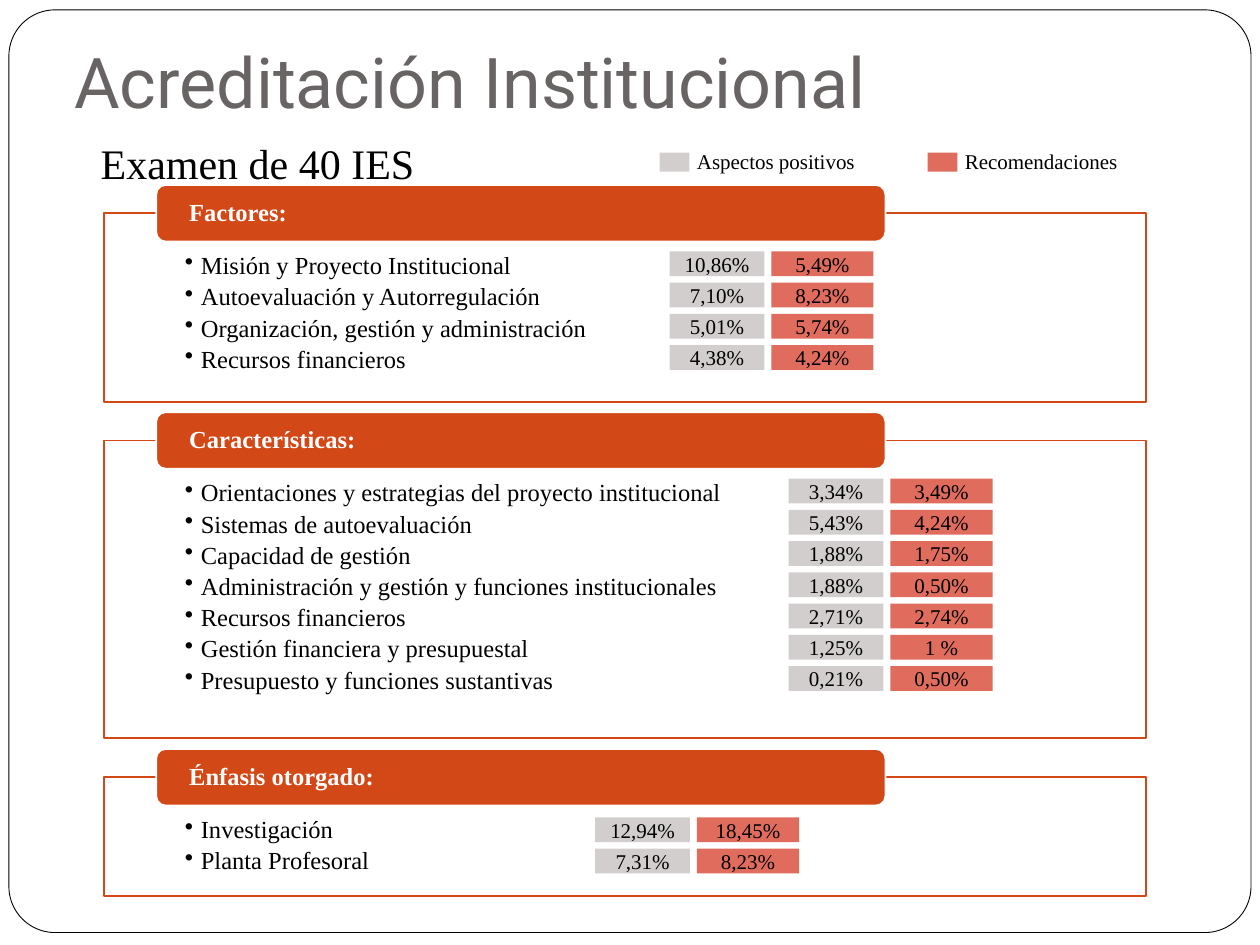
from dataclasses import dataclass
from typing import NamedTuple, Optional

import pptx
import pptx.dml.color
import pptx.enum.shapes
import pptx.enum.text
import pptx.oxml.ns
import pptx.util
from lxml import etree

Cm, Pt = pptx.util.Cm, pptx.util.Pt
SHAPE = pptx.enum.shapes.MSO_SHAPE
ANCHOR = pptx.enum.text.MSO_ANCHOR
ALIGN = pptx.enum.text.PP_ALIGN

SERIF = "Times New Roman"
BLACK, WHITE, ORANGE = "000000", "FFFFFF", "D34817"
GRAY, RED, TITLE_GRAY = "D3CECE", "DF6C5D", "696464"

PANEL_LEFT, PANEL_WIDTH = 2.1, 21
HEADER_LEFT, HEADER_WIDTH, HEADER_HEIGHT, HEADER_RISE = 3.15, 14.7, 1.14, 0.57
ROW_PITCH, CELL_HEIGHT = 0.63, 0.5
POSITIVE_WIDTH, ADVICE_WIDTH, ADVICE_OFFSET = 1.91, 2.06, 2.05


class Area(NamedTuple):
    """Left, top, width and height in centimetres."""
    left: float
    top: float
    width: float
    height: float

    def lengths(self):
        return [Cm(value) for value in self]


class Row(NamedTuple):
    label: str
    positive: str
    advice: str


@dataclass
class Section:
    heading: str
    top: float
    height: float
    cells_left: float
    cells_top: float
    rows: list[Row]


@dataclass
class Legend:
    label: str
    color: str
    swatch_left: float
    text_left: float


SECTIONS = [
    Section("Factores:", 4.3, 3.8, 13.5, 5.07, [
        Row("Misión y Proyecto Institucional", "10,86%", "5,49%"),
        Row("Autoevaluación y Autorregulación", "7,10%", "8,23%"),
        Row("Organización, gestión y administración", "5,01%", "5,74%"),
        Row("Recursos financieros", "4,38%", "4,24%"),
    ]),
    Section("Características:", 8.88, 6, 15.9, 9.65, [
        Row("Orientaciones y estrategias del proyecto institucional", "3,34%", "3,49%"),
        Row("Sistemas de autoevaluación", "5,43%", "4,24%"),
        Row("Capacidad de gestión", "1,88%", "1,75%"),
        Row("Administración y gestión y funciones institucionales", "1,88%", "0,50%"),
        Row("Recursos financieros", "2,71%", "2,74%"),
        Row("Gestión financiera y presupuestal", "1,25%", "1 %"),
        Row("Presupuesto y funciones sustantivas", "0,21%", "0,50%"),
    ]),
    Section("Énfasis otorgado:", 15.67, 2.4, 12, 16.48, [
        Row("Investigación", "12,94%", "18,45%"),
        Row("Planta Profesoral", "7,31%", "8,23%"),
    ]),
]
LEGENDS = [
    Legend("Aspectos positivos", GRAY, 13.3, 13.8),
    Legend("Recomendaciones", RED, 18.7, 19.2),
]


def rgb(color: str):
    return pptx.dml.color.RGBColor.from_string(color)


def add_block(page, kind, area: Area, fill: str,
              line: Optional[str] = None, line_width: float = 1):
    block = page.shapes.add_shape(kind, *area.lengths())
    block.shadow.inherit = False
    block.fill.solid()
    block.fill.fore_color.rgb = rgb(fill)
    if line:
        block.line.color.rgb = rgb(line)
        block.line.width = Pt(line_width)
    else:
        block.line.fill.background()
    return block


def write(shape, text: str, size: float, color: str = BLACK, font: str = SERIF,
          bold: bool = False, align=ALIGN.LEFT, anchor=ANCHOR.TOP):
    frame = shape.text_frame
    frame.text = text
    frame.word_wrap = True
    frame.vertical_anchor = anchor
    for para in frame.paragraphs:
        para.alignment = align
        for span in para.runs:
            span.font.size = Pt(size)
            span.font.name = font
            span.font.bold = bold
            span.font.color.rgb = rgb(color)
    return frame


def set_insets(frame, side: float, top: float, bottom: float):
    frame.margin_left = frame.margin_right = Cm(side)
    frame.margin_top, frame.margin_bottom = Cm(top), Cm(bottom)


def add_label(page, area: Area, text: str, size: float):
    frame = write(page.shapes.add_textbox(*area.lengths()), text, size)
    frame.auto_size = pptx.enum.text.MSO_AUTO_SIZE.SHAPE_TO_FIT_TEXT


def add_bullet(para):
    properties = para._p.get_or_add_pPr()
    properties.set("marL", str(Cm(0.32)))
    properties.set("indent", str(-Cm(0.32)))
    bullet = etree.SubElement(properties, pptx.oxml.ns.qn("a:buChar"))
    bullet.set("char", "•")


def add_panel(page, section: Section):
    area = Area(PANEL_LEFT, section.top, PANEL_WIDTH, section.height)
    panel = add_block(page, SHAPE.RECTANGLE, area, WHITE, ORANGE)
    fill_color = panel._element.spPr.find(".//" + pptx.oxml.ns.qn("a:srgbClr"))
    etree.SubElement(fill_color, pptx.oxml.ns.qn("a:alpha")).set("val", "90000")

    frame = write(panel, "\n".join(row.label for row in section.rows), 14)
    set_insets(frame, 1.63, 0.81, 0.28)
    for para in frame.paragraphs:
        para.line_spacing = 0.9
        para.space_after = Pt(2.7)
        add_bullet(para)

    area = Area(HEADER_LEFT, section.top - HEADER_RISE, HEADER_WIDTH, HEADER_HEIGHT)
    header = add_block(page, SHAPE.ROUNDED_RECTANGLE, area, ORANGE, WHITE)
    frame = write(header, section.heading, 14, WHITE, bold=True, anchor=ANCHOR.MIDDLE)
    frame.paragraphs[0].line_spacing = 0.9
    set_insets(frame, 0.61, 0.05, 0.05)


def add_cells(page, section: Section):
    for index, row in enumerate(section.rows):
        top = section.cells_top + index * ROW_PITCH
        for text, offset, width, color in (
            (row.positive, 0, POSITIVE_WIDTH, GRAY),
            (row.advice, ADVICE_OFFSET, ADVICE_WIDTH, RED),
        ):
            area = Area(section.cells_left + offset, top, width, CELL_HEIGHT)
            cell = add_block(page, SHAPE.RECTANGLE, area, color)
            write(cell, text, 12, align=ALIGN.CENTER, anchor=ANCHOR.MIDDLE)


def main():
    deck = pptx.Presentation()
    deck.slide_width, deck.slide_height = Cm(25.4), Cm(19.05)
    page = deck.slides.add_slide(deck.slide_layouts[6])

    border = add_block(page, SHAPE.ROUNDED_RECTANGLE, Area(0.18, 0.2, 25.04, 18.6),
                       WHITE, BLACK, 0.5)
    border.adjustments[0] = 0.05

    for section in SECTIONS:
        add_panel(page, section)

    title = page.shapes.add_textbox(*Area(1.25, -1.73, 22.86, 4.45).lengths())
    frame = write(title, "Acreditación Institucional", 40, TITLE_GRAY, "Roboto",
                  anchor=ANCHOR.BOTTOM)
    set_insets(frame, 0.25, 0.13, 0.25)
    add_label(page, Area(1.78, 2.65, 8, 1.27), "Examen de 40 IES", 24)

    for legend in LEGENDS:
        add_label(page, Area(legend.text_left, 2.87, 4.1, 0.76), legend.label, 12)
        add_block(page, SHAPE.RECTANGLE, Area(legend.swatch_left, 3.08, 0.6, 0.38),
                  legend.color)

    for section in SECTIONS:
        add_cells(page, section)

    deck.save("out.pptx")


if __name__ == "__main__":
    main()
